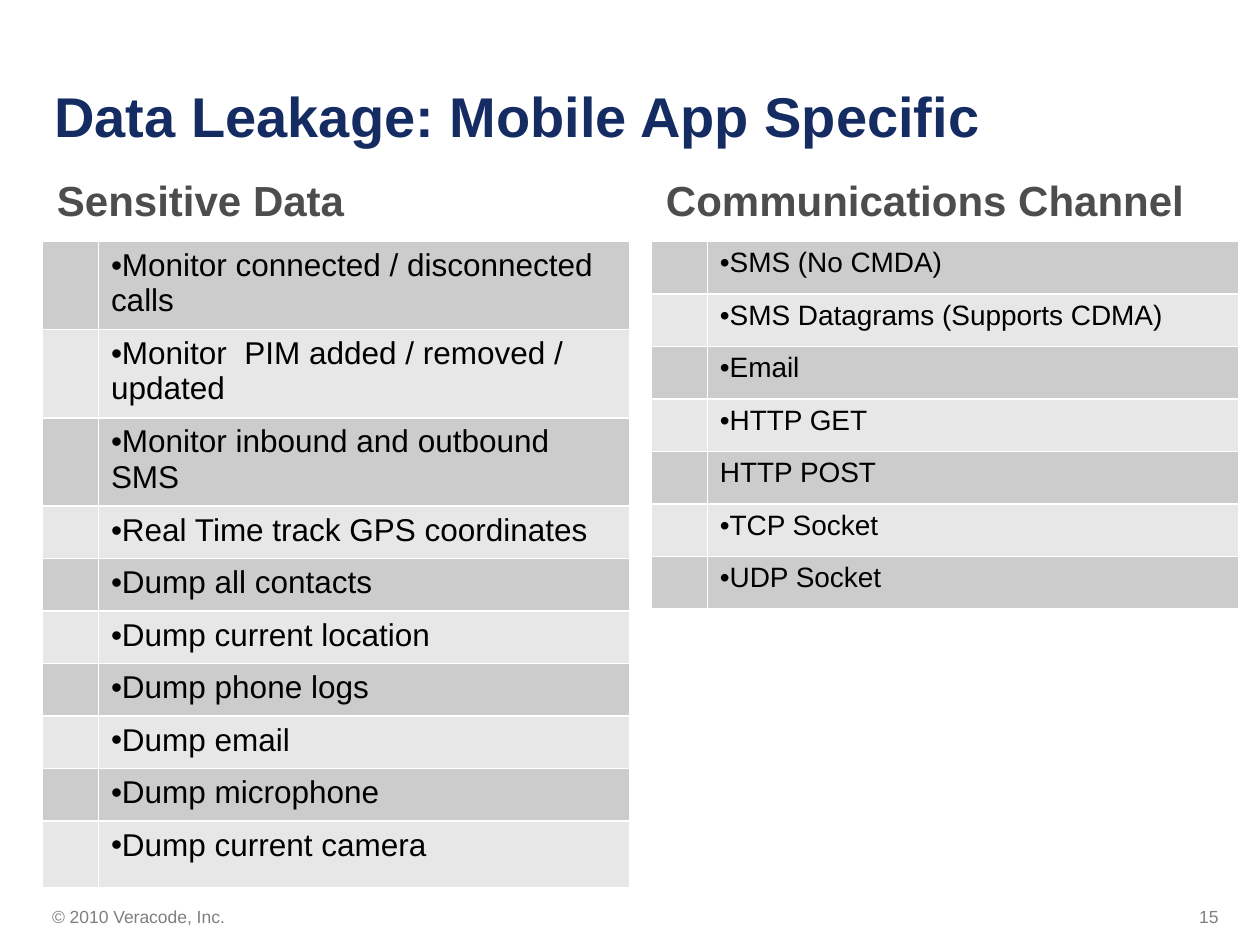
from lxml.etree import SubElement
from pptx import Presentation
from pptx.dml.color import RGBColor
from pptx.enum.text import MSO_ANCHOR, PP_ALIGN
from pptx.oxml.ns import qn
from pptx.util import Emu, Pt

EMU_PER_PX = 9525
ROW_HEIGHT = 40
COLUMN_WIDTHS = (43, 405)
BAND_FILLS = ("CCCCCC", "E7E7E7")
SENSITIVE_DATA = (
    "Monitor connected / disconnected calls",
    "Monitor  PIM added / removed / updated",
    "Monitor inbound and outbound SMS",
    "Real Time track GPS coordinates",
    "Dump all contacts",
    "Dump current location",
    "Dump phone logs",
    "Dump email",
    "Dump microphone",
    "Dump current camera",
)
CHANNELS = (
    "SMS (No CMDA)",
    "SMS Datagrams (Supports CDMA)",
    "Email",
    "HTTP GET",
    "HTTP POST",
    "TCP Socket",
    "UDP Socket",
)
UNBULLETED = {"HTTP POST"}


def px(length):
    return Emu(length * EMU_PER_PX)


def color(value):
    return RGBColor.from_string(value)


def format_runs(paragraph, size, value, bold=False):
    for run in paragraph.runs:
        run.font.name = "Arial"
        run.font.size = Pt(size)
        run.font.bold = bold
        run.font.color.rgb = color(value)


def add_text(slide, box, text, size, value, bold=False, wrap=True,
             anchor=MSO_ANCHOR.TOP, align=PP_ALIGN.LEFT):
    shape = slide.shapes.add_textbox(*map(px, box))
    text_frame = shape.text_frame
    text_frame.word_wrap = wrap
    text_frame.vertical_anchor = anchor
    text_frame.text = text
    paragraph = text_frame.paragraphs[0]
    paragraph.alignment = align
    format_runs(paragraph, size, value, bold)


def add_bullet(paragraph):
    properties = paragraph._p.get_or_add_pPr()
    properties.set("marL", "0")
    properties.set("indent", "0")
    SubElement(properties, qn("a:buFont"), typeface="Arial")
    SubElement(properties, qn("a:buChar"), char="•")


def style_cell(cell, fill):
    cell.fill.solid()
    cell.fill.fore_color.rgb = color(fill)
    properties = cell._tc.get_or_add_tcPr()
    for position, side in enumerate(("lnL", "lnR", "lnT", "lnB")):
        line = SubElement(properties, qn(f"a:{side}"), w=str(Pt(1)))
        solid_fill = SubElement(line, qn("a:solidFill"))
        SubElement(solid_fill, qn("a:srgbClr"), val="FFFFFF")
        properties.insert(position, line)


def add_list_table(slide, left, items, size, last_height=ROW_HEIGHT):
    heights = [ROW_HEIGHT] * (len(items) - 1) + [last_height]
    table = slide.shapes.add_table(
        len(items), len(COLUMN_WIDTHS), px(left), px(184),
        px(sum(COLUMN_WIDTHS)), px(sum(heights))).table
    table.first_row = False
    table.horz_banding = False
    for column, width in zip(table.columns, COLUMN_WIDTHS):
        column.width = px(width)
    for index, (item, height) in enumerate(zip(items, heights)):
        table.rows[index].height = px(height)
        for cell in table.rows[index].cells:
            style_cell(cell, BAND_FILLS[index % 2])
        text_frame = table.cell(index, 1).text_frame
        text_frame.text = item
        paragraph = text_frame.paragraphs[0]
        if item not in UNBULLETED:
            add_bullet(paragraph)
        format_runs(paragraph, size, "000000")


def add_footer(slide, left, width, text):
    add_text(slide, (left, 685, width, 26), text, 10, "808080", wrap=False,
             anchor=MSO_ANCHOR.MIDDLE, align=PP_ALIGN.CENTER)


def add_heading(slide, left, width, text):
    add_text(slide, (left, 128, width, 48), text, 24, "4D4D4D", bold=True)


def main():
    presentation = Presentation()
    presentation.slide_width = px(960)
    presentation.slide_height = px(720)
    slide = presentation.slides.add_slide(presentation.slide_layouts[6])
    add_footer(slide, 29, 153, "© 2010 Veracode, Inc.")
    add_footer(slide, 903, 36, "15")
    add_text(slide, (32, 56, 896, 64), "Data Leakage: Mobile App Specific",
             32, "152C63", bold=True, anchor=MSO_ANCHOR.MIDDLE)
    add_list_table(slide, 32, SENSITIVE_DATA, 18, last_height=51)
    add_list_table(slide, 496, CHANNELS, 16)
    add_heading(slide, 34, 288, "Sensitive Data")
    add_heading(slide, 498, 444, "Communications Channel")
    presentation.save("out.pptx")


if __name__ == "__main__":
    main()
